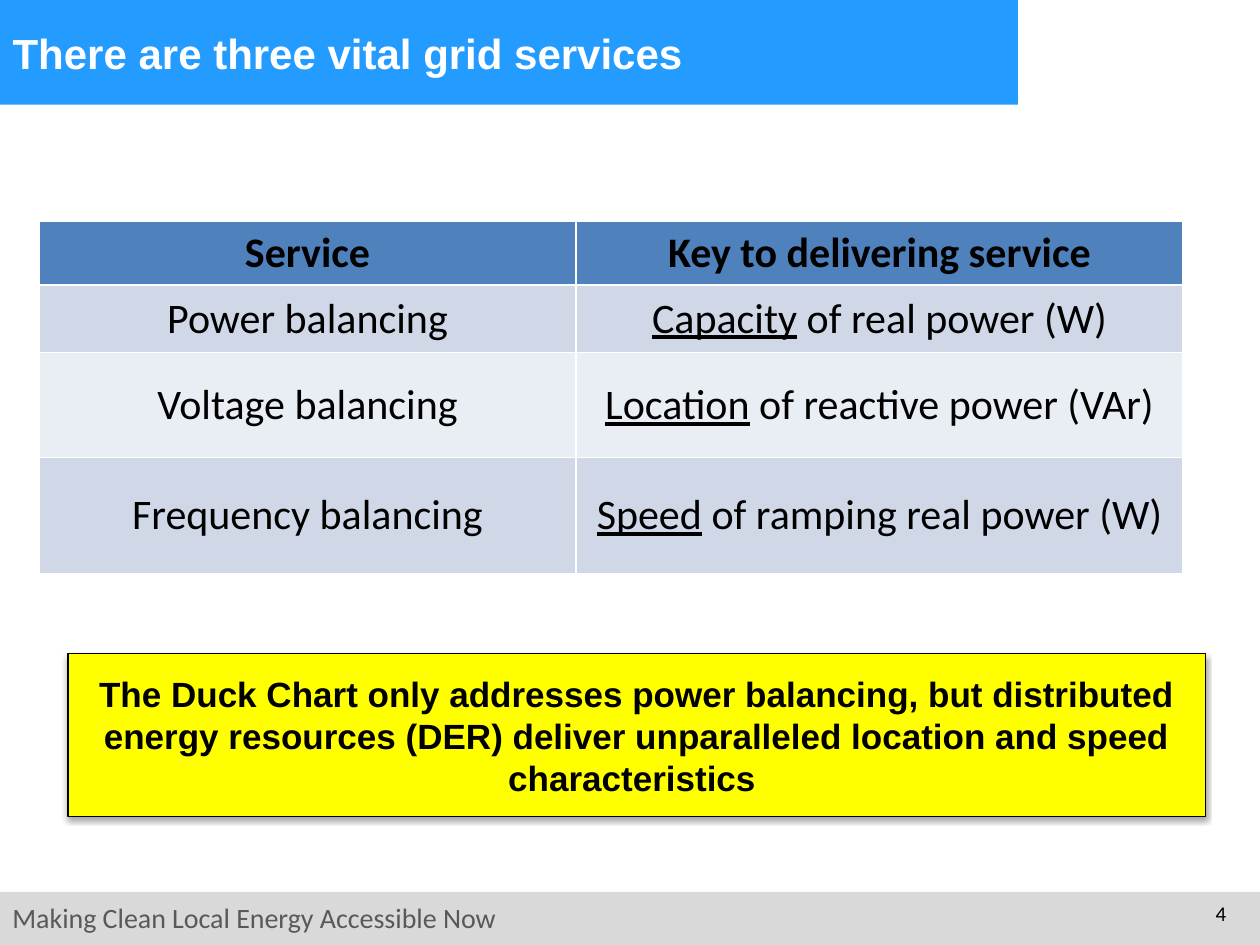
"""Build a slide on the three vital grid services."""
from dataclasses import dataclass

from lxml import etree
from pptx import Presentation
from pptx.dml.color import RGBColor
from pptx.enum.shapes import MSO_SHAPE
from pptx.enum.text import MSO_ANCHOR, MSO_AUTO_SIZE, PP_ALIGN
from pptx.oxml.ns import qn
from pptx.util import Cm, Pt

RECT = MSO_SHAPE.RECTANGLE
MIDDLE = MSO_ANCHOR.MIDDLE
FIXED = MSO_AUTO_SIZE.NONE
LEFT, CENTER, RIGHT = PP_ALIGN.LEFT, PP_ALIGN.CENTER, PP_ALIGN.RIGHT


@dataclass(frozen=True)
class Theme:
    blue: str = "249CFF"
    head: str = "4F81BD"
    bands: tuple = ("D0D8E8", "E9EDF4")
    yellow: str = "FFFF00"
    gray: str = "D9D9D9"
    slate: str = "595959"
    black: str = "000000"
    white: str = "FFFFFF"
    sans: str = "Arial"
    body: str = "Calibri"
    large: int = 24
    note: int = 20
    foot: int = 16
    small: int = 12


@dataclass(frozen=True)
class Box:
    left: float
    top: float
    width: float
    height: float

    def place(self) -> tuple:
        return Cm(self.left), Cm(self.top), Cm(self.width), Cm(self.height)


@dataclass(frozen=True)
class Style:
    size: int
    font: str
    color: str
    bold: bool = False
    align: PP_ALIGN = LEFT


@dataclass(frozen=True)
class Service:
    name: str
    key: str
    rest: str
    height: float


THEME = Theme()
TITLE = Style(THEME.large, THEME.sans, THEME.white, True)
HEAD = Style(THEME.large, THEME.body, THEME.black, True, CENTER)
CELL = Style(THEME.large, THEME.body, THEME.black, False, CENTER)
NOTE = Style(THEME.note, THEME.sans, THEME.black, True, CENTER)
FOOT = Style(THEME.foot, THEME.body, THEME.slate)
PAGE = Style(THEME.small, THEME.body, THEME.black, False, RIGHT)

HEADS = ("Service", "Key to delivering service")
WIDTHS = (10.82, 12.24)
HEAD_ROW = 1.02
HANG = Cm(0.48)
SERVICES = (
    Service("Power balancing", "Capacity", " of real power (W)", 1.37),
    Service("Voltage balancing", "Location", " of reactive power (VAr)", 2.11),
    Service("Frequency balancing", "Speed", " of ramping real power (W)", 2.34),
)
CLAIM = ("The Duck Chart only addresses power balancing, but distributed energy "
         "resources (DER) deliver unparalleled location and speed characteristics ")


def paint(item, color: str) -> None:
    """Give a shape or cell a solid fill."""
    item.fill.solid()
    item.fill.fore_color.rgb = RGBColor.from_string(color)


def write(frame, text: str, style: Style):
    """Put styled text into the first paragraph of a frame."""
    para = frame.paragraphs[0]
    if text:
        para.text = text
    para.alignment = style.align
    font = para.font
    font.size, font.name, font.bold = Pt(style.size), style.font, style.bold
    font.color.rgb = RGBColor.from_string(style.color)
    return para


def add_bar(slide, box: Box, color: str):
    """Add a plain filled block."""
    shape = slide.shapes.add_shape(RECT, *box.place())
    shape.shadow.inherit = False
    paint(shape, color)
    shape.line.fill.background()
    return shape


def add_label(slide, box: Box, text: str, style: Style) -> None:
    """Add a text box that wraps."""
    frame = slide.shapes.add_textbox(*box.place()).text_frame
    frame.word_wrap = True
    write(frame, text, style)


def add_title(slide, box: Box, text: str) -> None:
    """Move, fill and write the title."""
    title = slide.shapes.title
    title.left, title.top, title.width, title.height = box.place()
    paint(title, THEME.blue)
    frame = title.text_frame
    frame.auto_size = FIXED
    frame.vertical_anchor = MIDDLE
    write(frame, text, TITLE)


def fill_cell(cell, text: str, style: Style, color: str):
    """Fill a table cell and write its text."""
    paint(cell, color)
    cell.vertical_anchor = MIDDLE
    return write(cell.text_frame, text, style)


def add_grid(slide, left: float, top: float) -> None:
    """Add the table of services."""
    heights = (HEAD_ROW, *(item.height for item in SERVICES))
    box = Box(left, top, sum(WIDTHS), sum(heights))
    table = slide.shapes.add_table(len(heights), len(WIDTHS), *box.place()).table
    for column, width in zip(table.columns, WIDTHS):
        column.width = Cm(width)
    for row, height in zip(table.rows, heights):
        row.height = Cm(height)
    for col, text in enumerate(HEADS):
        fill_cell(table.cell(0, col), text, HEAD, THEME.head)
    for row, item in enumerate(SERVICES):
        color = THEME.bands[row % 2]
        fill_cell(table.cell(row + 1, 0), item.name, CELL, color)
        para = fill_cell(table.cell(row + 1, 1), "", CELL, color)
        props = para._p.get_or_add_pPr()
        props.set("marL", str(HANG))
        props.set("indent", str(-HANG))
        for text, line in ((item.key, True), (item.rest, False)):
            run = para.add_run()
            run.text = text
            run.font.underline = line


def add_shadow(shape) -> None:
    """Cast a soft shadow straight down."""
    effects = shape._element.spPr.find(qn("a:effectLst"))
    shade = etree.SubElement(effects, qn("a:outerShdw"), blurRad=str(Pt(3.1)),
                             dist=str(Pt(1.8)), dir="5400000", rotWithShape="0")
    color = etree.SubElement(shade, qn("a:srgbClr"), val=THEME.black)
    etree.SubElement(color, qn("a:alpha"), val="35000")


def add_claim(slide, box: Box) -> None:
    """Add the framed claim below the table."""
    shape = add_bar(slide, box, THEME.yellow)
    shape.line.color.rgb = RGBColor.from_string(THEME.black)
    shape.line.width = Pt(0.75)
    add_shadow(shape)
    shape.text_frame.word_wrap = True
    shape.text_frame.vertical_anchor = MIDDLE
    write(shape.text_frame, CLAIM, NOTE)


def main() -> None:
    """Build and save the deck."""
    deck = Presentation()
    deck.slide_width, deck.slide_height = Cm(25.4), Cm(19.05)
    slide = deck.slides.add_slide(deck.slide_layouts[5])
    add_title(slide, Box(0, 0, 20.52, 2.11), "There are three vital grid services")
    add_bar(slide, Box(0, 17.98, 25.4, 1.07), THEME.gray)
    add_label(slide, Box(0, 18.03, 13.13, 0.94),
              "Making Clean Local Energy Accessible Now", FOOT)
    add_label(slide, Box(23.7, 18.03, 1.27, 1.02), "4", PAGE)
    add_grid(slide, 0.79, 4.47)
    add_claim(slide, Box(1.37, 13.18, 22.94, 3.28))
    deck.save("out.pptx")


if __name__ == "__main__":
    main()
